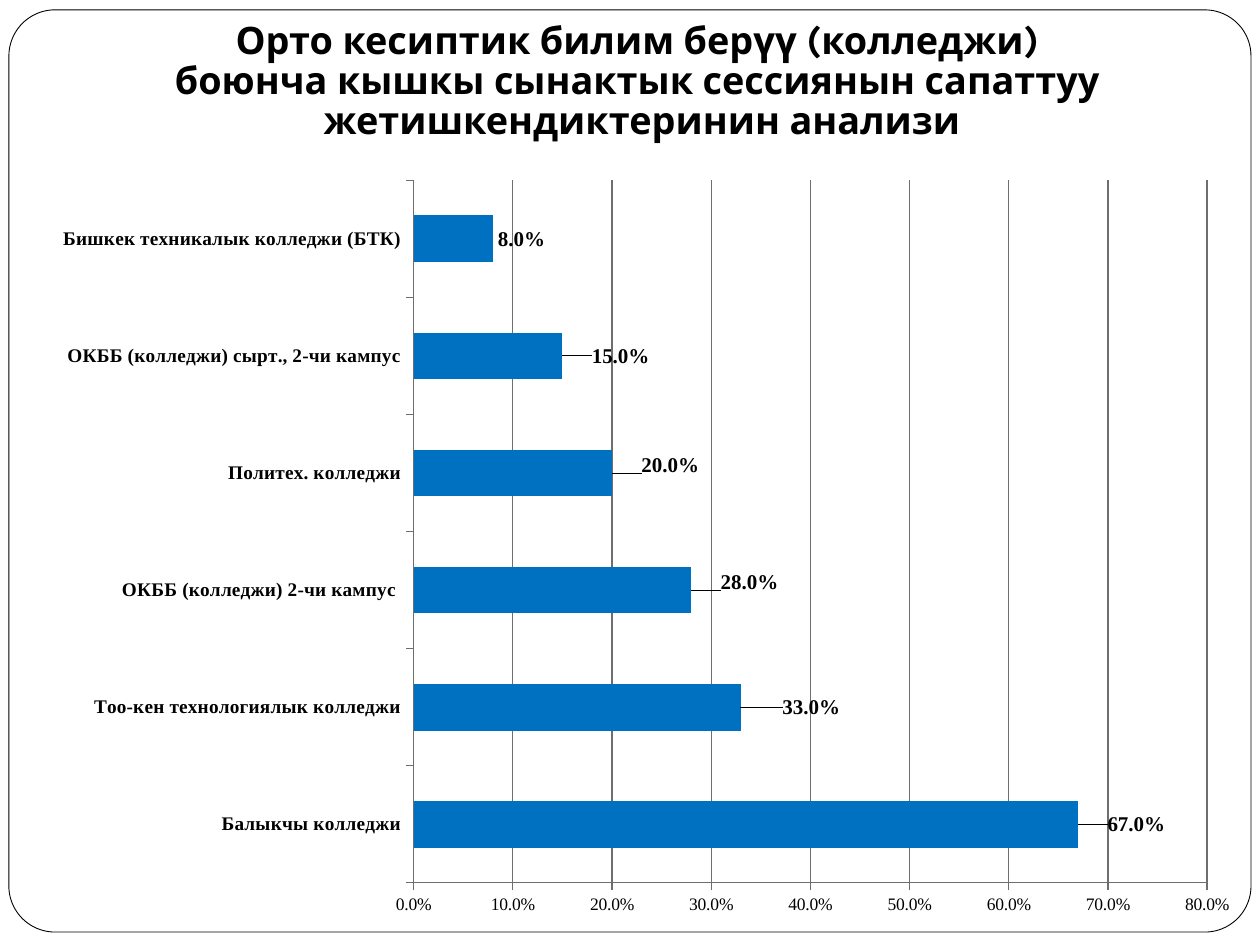
from lxml import etree
from pptx import Presentation
from pptx.chart.data import CategoryChartData
from pptx.dml.color import RGBColor
from pptx.enum.chart import XL_CHART_TYPE, XL_LABEL_POSITION, XL_TICK_MARK
from pptx.enum.shapes import MSO_SHAPE
from pptx.enum.text import MSO_ANCHOR, MSO_AUTO_SIZE, PP_ALIGN
from pptx.oxml.ns import qn
from pptx.util import Cm, Pt

BAR_CLUSTERED = XL_CHART_TYPE.BAR_CLUSTERED
OUTSIDE_END = XL_LABEL_POSITION.OUTSIDE_END
TICK_OUTSIDE = XL_TICK_MARK.OUTSIDE
ROUNDED_RECTANGLE = MSO_SHAPE.ROUNDED_RECTANGLE
BOTTOM = MSO_ANCHOR.BOTTOM
NO_AUTOFIT = MSO_AUTO_SIZE.NONE
CENTER = PP_ALIGN.CENTER

COLORS = {"text": "000000", "paper": "FFFFFF", "bar": "0070C0", "grid": "6E6E6E"}
TITLE_FONT = "Karla"
CHART_FONT = "Times New Roman"
PERCENT = "0.0%"
TITLE = (
    "Орто кесиптик билим берүү (колледжи)\v"
    "боюнча кышкы сынактык сессиянын сапаттуу\v"
    " жетишкендиктеринин анализи"
)
QUALITY_RATES = {
    "Балыкчы колледжи": 0.67,
    "Тоо-кен технологиялык колледжи": 0.33,
    "ОКББ (колледжи) 2-чи кампус ": 0.28,
    "Политех. колледжи": 0.2,
    "ОКББ (колледжи) сырт., 2-чи кампус": 0.15,
    "Бишкек техникалык колледжи (БТК)": 0.08,
}
LABEL_SHIFTS = [(0.02, 0), (0.03, 0), (0.02, -0.01), (0.02, -0.01), (0.02, 0)]
PLOT_AREA = {"x": 0.31, "y": 0.02, "w": 0.65, "h": 0.92}


def rgb(name):
    return RGBColor.from_string(COLORS[name])


def style_font(font, size, bold, family):
    font.size = Pt(size)
    font.bold = bold
    font.name = family
    font.color.rgb = rgb("text")


def add_frame(slide):
    frame = slide.shapes.add_shape(
        ROUNDED_RECTANGLE, Cm(0.18), Cm(0.2), Cm(25.04), Cm(18.59)
    )
    frame.adjustments[0] = 0.05
    frame.shadow.inherit = False
    frame.fill.solid()
    frame.fill.fore_color.rgb = rgb("paper")
    frame.line.color.rgb = rgb("text")
    frame.line.width = Pt(0.5)
    slide.shapes._spTree.insert(2, frame._element)


def fill_title(slide):
    title = slide.shapes.title
    title.left, title.top = Cm(0.3), Cm(0.53)
    title.width, title.height = Cm(25.1), Cm(2.59)
    text = title.text_frame
    text.text = TITLE
    text.auto_size = NO_AUTOFIT
    text.vertical_anchor = BOTTOM
    text.margin_left = text.margin_right = text.margin_bottom = Cm(0.25)
    text.margin_top = Cm(0.13)
    paragraph = text.paragraphs[0]
    paragraph.alignment = CENTER
    paragraph.line_spacing = 0.88
    style_font(paragraph.font, 21.6, True, TITLE_FONT)


def make_layout(modes, values):
    layout = etree.Element(qn("c:layout"))
    manual = etree.SubElement(layout, qn("c:manualLayout"))
    for tag, value in {**modes, **values}.items():
        etree.SubElement(manual, qn(f"c:{tag}"), val=str(value))
    return layout


def place_plot(chart):
    plot_area = chart._chartSpace.find(".//" + qn("c:plotArea"))
    for automatic in plot_area.findall(qn("c:layout")):
        plot_area.remove(automatic)
    modes = {"layoutTarget": "inner", "xMode": "edge", "yMode": "edge"}
    plot_area.insert(0, make_layout(modes, PLOT_AREA))


def label_bars(series):
    labels = series.data_labels
    labels.show_value = True
    labels.number_format = PERCENT
    labels.number_format_is_linked = False
    labels.position = OUTSIDE_END
    style_font(labels.font, 12, True, CHART_FONT)
    for index in range(len(LABEL_SHIFTS)):
        label = series.points[index].data_label
        style_font(label.font, 12, True, CHART_FONT)
        label.position = OUTSIDE_END
    shifted = series._element.findall(".//" + qn("c:dLbl"))
    for label, (x, y) in zip(shifted, LABEL_SHIFTS):
        label.insert(1, make_layout({}, {"x": x, "y": y}))
        number_format = etree.Element(
            qn("c:numFmt"), formatCode=PERCENT, sourceLinked="0"
        )
        label.insert(2, number_format)


def style_axis(axis, size, bold):
    axis.major_tick_mark = TICK_OUTSIDE
    style_font(axis.tick_labels.font, size, bold, CHART_FONT)
    axis.format.line.color.rgb = rgb("grid")
    axis.format.line.width = Pt(0.75)


def add_rates_chart(slide):
    data = CategoryChartData(number_format=PERCENT)
    data.categories = list(QUALITY_RATES)
    data.add_series("Series 1", list(QUALITY_RATES.values()))
    chart = slide.shapes.add_chart(
        BAR_CLUSTERED, Cm(0.71), Cm(3.33), Cm(24.61), Cm(15.39), data
    ).chart
    chart.has_legend = False
    chart.has_title = False
    style_font(chart.font, 10, False, CHART_FONT)
    place_plot(chart)

    style_axis(chart.category_axis, 11, True)
    rates = chart.value_axis
    style_axis(rates, 10, False)
    rates.minimum_scale, rates.maximum_scale, rates.major_unit = 0, 0.8, 0.1
    rates.tick_labels.number_format = PERCENT
    rates.tick_labels.number_format_is_linked = False
    rates.has_major_gridlines = True
    rates.major_gridlines.format.line.color.rgb = rgb("grid")
    rates.major_gridlines.format.line.width = Pt(0.75)

    plot = chart.plots[0]
    plot.gap_width = 150
    plot.vary_by_categories = False
    bars = plot.series[0]
    bars.format.fill.solid()
    bars.format.fill.fore_color.rgb = rgb("bar")
    label_bars(bars)


def main():
    presentation = Presentation()
    presentation.slide_width, presentation.slide_height = Cm(25.4), Cm(19.05)
    slide = presentation.slides.add_slide(presentation.slide_layouts[5])
    add_frame(slide)
    fill_title(slide)
    add_rates_chart(slide)
    presentation.save("out.pptx")


if __name__ == "__main__":
    main()
